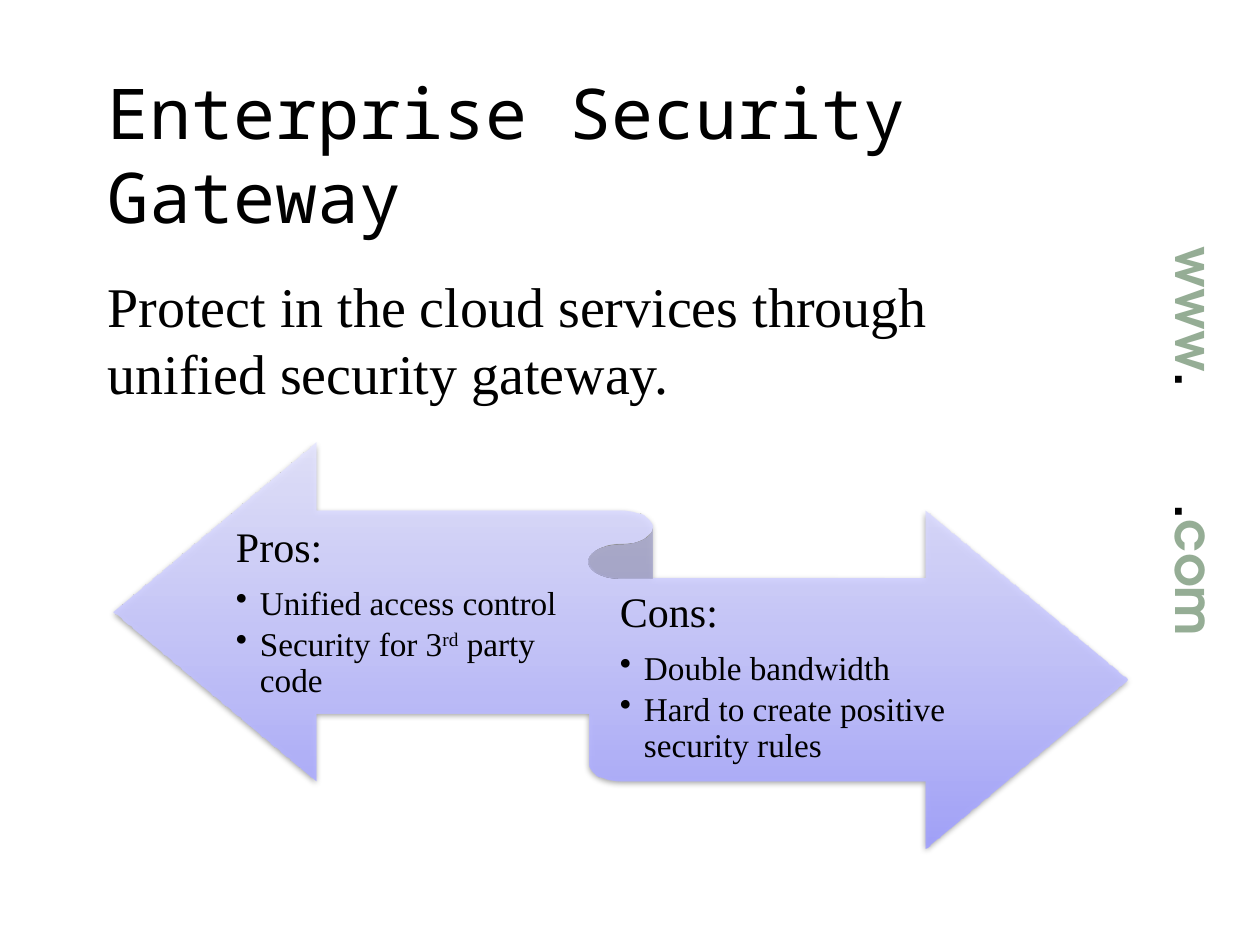
from lxml import etree
from pptx import Presentation
from pptx.dml.color import RGBColor
from pptx.enum.shapes import MSO_SHAPE
from pptx.enum.text import MSO_ANCHOR, MSO_AUTO_SIZE, PP_ALIGN
from pptx.oxml import parse_xml
from pptx.oxml.ns import nsdecls, qn
from pptx.util import Pt

RIBBON = MSO_SHAPE.LEFT_RIGHT_RIBBON
MIDDLE, TOP = MSO_ANCHOR.MIDDLE, MSO_ANCHOR.TOP
NO_AUTOFIT = MSO_AUTO_SIZE.NONE
LEFT = PP_ALIGN.LEFT
EMU_PER_PX = 914400 / 126
COLORS = {
    "text": "000000",
    "site": "95AD95",
    "ribbon_low": "9F9FFF",
    "ribbon_middle": "BBBBFF",
    "ribbon_high": "E5E5FF",
}
SERIF = "Times New Roman"


def px(*lengths):
    """Turn px lengths into a list of EMU."""
    return [round(length * EMU_PER_PX) for length in lengths]


def add_run(paragraph, text, size, font_name, color="text", bold=False):
    run = paragraph.add_run()
    run.text = text
    formats = {"size": Pt(size), "name": font_name, "bold": bold}
    for name, value in formats.items():
        setattr(run.font, name, value)
    run.font.color.rgb = RGBColor.from_string(COLORS[color])
    return run


presentation = Presentation()
presentation.slide_width, presentation.slide_height = px(1260, 945)
slide = presentation.slides.add_slide(presentation.slide_layouts[1])

# Site address running down the right edge
site = slide.shapes.add_textbox(*px(983, 410, 427, 76))
site.rotation = 90
site.text_frame.word_wrap = True
paragraph = site.text_frame.paragraphs[0]
tab_list = etree.SubElement(paragraph._p.get_or_add_pPr(), qn("a:tabLst"))
etree.SubElement(tab_list, qn("a:tab"), pos=str(px(258)[0]), algn="l")
for text, color in [("www", "site"), (".\t.", "text"), ("com", "site")]:
    add_run(paragraph, text, 30, "TeX Gyre Adventor", color, bold=True)

# Title and lead sentence
placeholders = [
    (slide.shapes.title, (95, 106, 973, 95), MIDDLE, 40, "Noto Sans Mono",
     "Enterprise Security Gateway"),
    (slide.placeholders[1], (95, 265, 883, 149), TOP, 32, SERIF,
     "Protect in the cloud services through unified security gateway."),
]
for shape, box, anchor, size, font_name, text in placeholders:
    shape.left, shape.top, shape.width, shape.height = px(*box)
    frame = shape.text_frame
    formats = {"word_wrap": True, "auto_size": NO_AUTOFIT, "vertical_anchor": anchor}
    for name, value in formats.items():
        setattr(frame, name, value)
    paragraph = frame.paragraphs[0]
    properties = paragraph._p.get_or_add_pPr()
    properties.set("marL", "0")
    properties.set("indent", "0")
    etree.SubElement(properties, qn("a:buNone"))
    paragraph.alignment = LEFT
    paragraph.space_before = Pt(0)
    add_run(paragraph, text, size, font_name)

# Two-way ribbon with gradient and soft shadow
ribbon = slide.shapes.add_shape(RIBBON, *px(114, 443, 1013, 405))
stops = "".join(
    f'<a:gs pos="{position}"><a:srgbClr val="{COLORS[color]}">'
    '<a:alpha val="90000"/></a:srgbClr></a:gs>'
    for position, color in [(0, "ribbon_low"), (35000, "ribbon_middle"),
                            (100000, "ribbon_high")]
)
ribbon_properties = ribbon._element.spPr
ribbon_properties.append(parse_xml(
    f'<a:gradFill {nsdecls("a")} rotWithShape="1"><a:gsLst>{stops}</a:gsLst>'
    '<a:lin ang="16200000" scaled="0"/></a:gradFill>'))
ribbon.line.fill.background()
ribbon_properties.append(parse_xml(
    f'<a:effectLst {nsdecls("a")}>'
    '<a:outerShdw blurRad="40000" dist="20000" dir="5400000" rotWithShape="0">'
    f'<a:srgbClr val="{COLORS["text"]}"><a:alpha val="38000"/></a:srgbClr>'
    '</a:outerShdw></a:effectLst>'))

# Arguments on each arrow; a bullet is a list of (text, baseline) pieces
arguments = [
    ((236, 515, 334, 198), "Pros:", [
        [("Unified access control", 0)],
        [("Security for 3", 0), ("rd", 30000), (" party code", 0)],
    ]),
    ((620, 580, 394, 198), "Cons:", [
        [("Double bandwidth", 0)],
        [("Hard to create positive security rules", 0)],
    ]),
]
bullet_indent = px(24)[0]
for box, heading, bullets in arguments:
    frame = slide.shapes.add_textbox(*px(*box)).text_frame
    margin_top, margin_bottom = px(11, 13)
    formats = {
        "word_wrap": True, "vertical_anchor": MIDDLE,
        "margin_left": 0, "margin_right": 0,
        "margin_top": margin_top, "margin_bottom": margin_bottom,
    }
    for name, value in formats.items():
        setattr(frame, name, value)
    paragraph = frame.paragraphs[0]
    paragraph.line_spacing = 0.9
    paragraph.space_after = Pt(8.4)
    add_run(paragraph, heading, 24, SERIF)
    for pieces in bullets:
        paragraph = frame.add_paragraph()
        properties = paragraph._p.get_or_add_pPr()
        properties.set("marL", str(bullet_indent))
        properties.set("indent", str(-bullet_indent))
        etree.SubElement(properties, qn("a:buChar"), char="•")
        paragraph.level = 1
        paragraph.line_spacing = 0.9
        paragraph.space_after = Pt(2.85)
        for text, baseline in pieces:
            run = add_run(paragraph, text, 19, SERIF)
            if baseline:
                run.font._element.set("baseline", str(baseline))

presentation.save("out.pptx")
